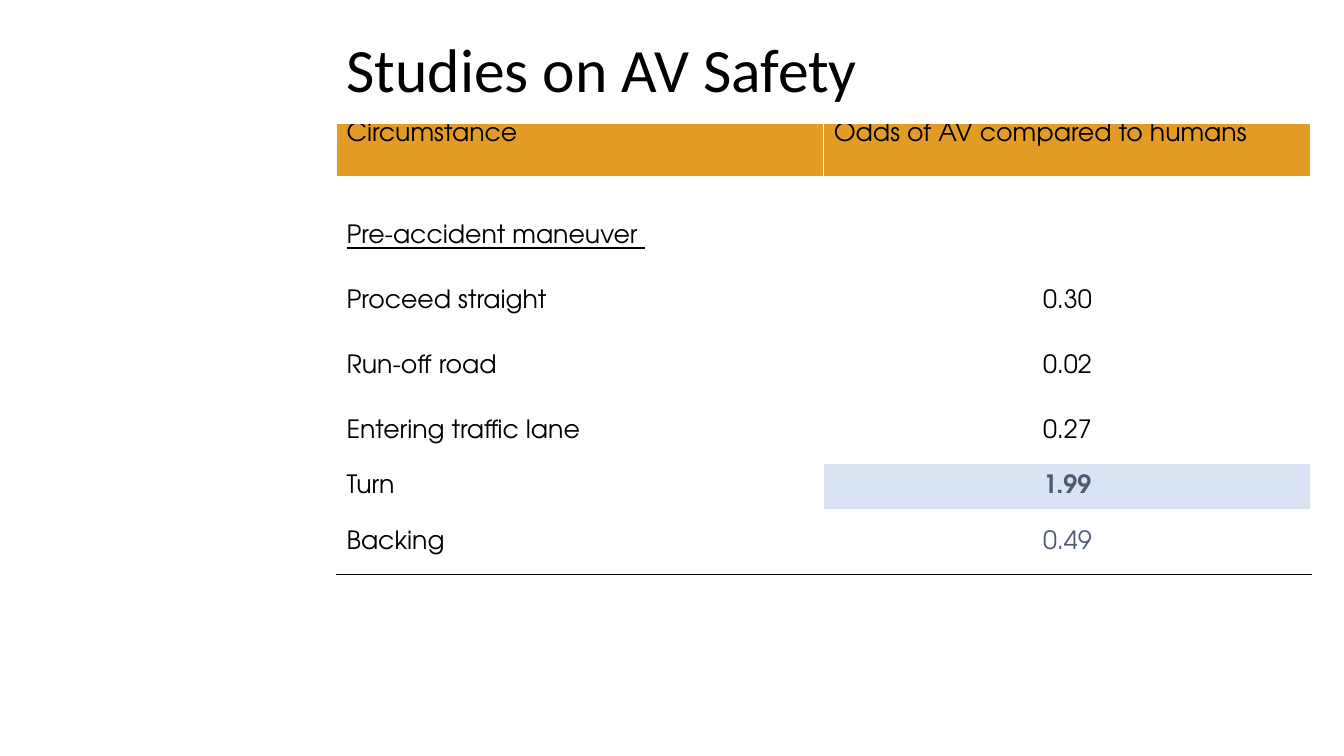
from lxml.etree import SubElement
from pptx import Presentation
from pptx.dml.color import RGBColor
from pptx.enum.text import MSO_ANCHOR as Anchor, PP_ALIGN as Align
from pptx.oxml import parse_xml
from pptx.oxml.ns import nsdecls, qn
from pptx.util import Cm, Pt

LEFT = Cm(8.48)
TABLE_FONT = "TeX Gyre Adventor"
BLACK, WHITE, SLATE = "000000", "FFFFFF", "4C5A76"
ORANGE, PALE_BLUE = "E29C25", "DAE3F3"

COLUMN_WIDTH = Cm(12.28)
ROW_HEIGHTS = [1.37, 0.69, 1.63, 1.63, 1.63, 1.63, 1.17, 1.63]
ROWS = [
    ("Circumstance", "Odds of AV compared to humans"),
    ("", ""),
    ("Pre-accident maneuver ", ""),
    ("Proceed straight", "0.30"),
    ("Run-off road", "0.02"),
    ("Entering traffic lane", "0.27"),
    ("Turn", "1.99"),
    ("Backing", "0.49"),
]
HEADER, SUBHEADING, TURN, BACKING = 0, 2, 6, 7


def color(hex_text):
    return RGBColor.from_string(hex_text)


def format_font(font, name, size, hex_text):
    font.name = name
    font.size = Pt(size)
    font.color.rgb = color(hex_text)


def add_title(slide, text):
    title = slide.shapes.title
    title.left, title.top, title.width, title.height = LEFT, Cm(0), Cm(22.12), Cm(3.68)
    frame = title.text_frame
    frame.text = text
    frame.word_wrap = True
    frame.vertical_anchor = Anchor.MIDDLE
    paragraph = frame.paragraphs[0]
    paragraph.alignment = Align.LEFT
    paragraph.line_spacing = 0.9
    format_font(paragraph.runs[0].font, "Calibri", 44, BLACK)


def set_bottom_border(cell, hex_text, width):
    border = parse_xml(
        f'<a:lnB {nsdecls("a")} w="{Pt(width)}"><a:solidFill>'
        f'<a:srgbClr val="{hex_text}"/></a:solidFill></a:lnB>'
    )
    cell._tc.get_or_add_tcPr().insert(0, border)


def fill_cell(cell, hex_text=None):
    if hex_text:
        cell.fill.solid()
        cell.fill.fore_color.rgb = color(hex_text)
    else:
        cell.fill.background()


def write_cell(cell, text, hex_text):
    cell.text_frame.text = text
    paragraph = cell.text_frame.paragraphs[0]
    if not text:
        # Small type keeps an empty row low
        SubElement(paragraph._p, qn("a:endParaRPr"), sz="800")
        return
    font = paragraph.runs[0].font
    format_font(font, TABLE_FONT, 18, hex_text)
    font.bold = False


def add_odds_table(slide):
    frame = slide.shapes.add_table(
        len(ROWS), 2, LEFT, Cm(3.1), COLUMN_WIDTH * 2, Cm(sum(ROW_HEIGHTS)))
    table = frame.table
    table.first_row = table.horz_banding = False
    for column in table.columns:
        column.width = COLUMN_WIDTH

    for r, (height, texts) in enumerate(zip(ROW_HEIGHTS, ROWS)):
        table.rows[r].height = Cm(height)
        for c, text in enumerate(texts):
            cell = table.cell(r, c)
            write_cell(cell, text, SLATE if c == 1 and r >= TURN else BLACK)
            fill_cell(cell, ORANGE if r == HEADER else None)
            if r == HEADER:
                cell.margin_top = cell.margin_bottom = 0
                set_bottom_border(cell, WHITE, 3)
            else:
                cell.vertical_anchor = Anchor.MIDDLE
                if c == 1:
                    cell.text_frame.paragraphs[0].alignment = Align.CENTER
            if r == BACKING:
                set_bottom_border(cell, BLACK, 1)

    # Emphasis on the subheading and the highest odds
    table.cell(SUBHEADING, 0).text_frame.paragraphs[0].runs[0].font.underline = True
    highest = table.cell(TURN, 1)
    fill_cell(highest, PALE_BLUE)
    highest.text_frame.paragraphs[0].runs[0].font.bold = True


def main():
    presentation = Presentation()
    presentation.slide_width, presentation.slide_height = Cm(33.87), Cm(19.05)
    slide = presentation.slides.add_slide(presentation.slide_layouts[5])
    add_title(slide, "Studies on AV Safety")
    add_odds_table(slide)
    presentation.save("out.pptx")


if __name__ == "__main__":
    main()
